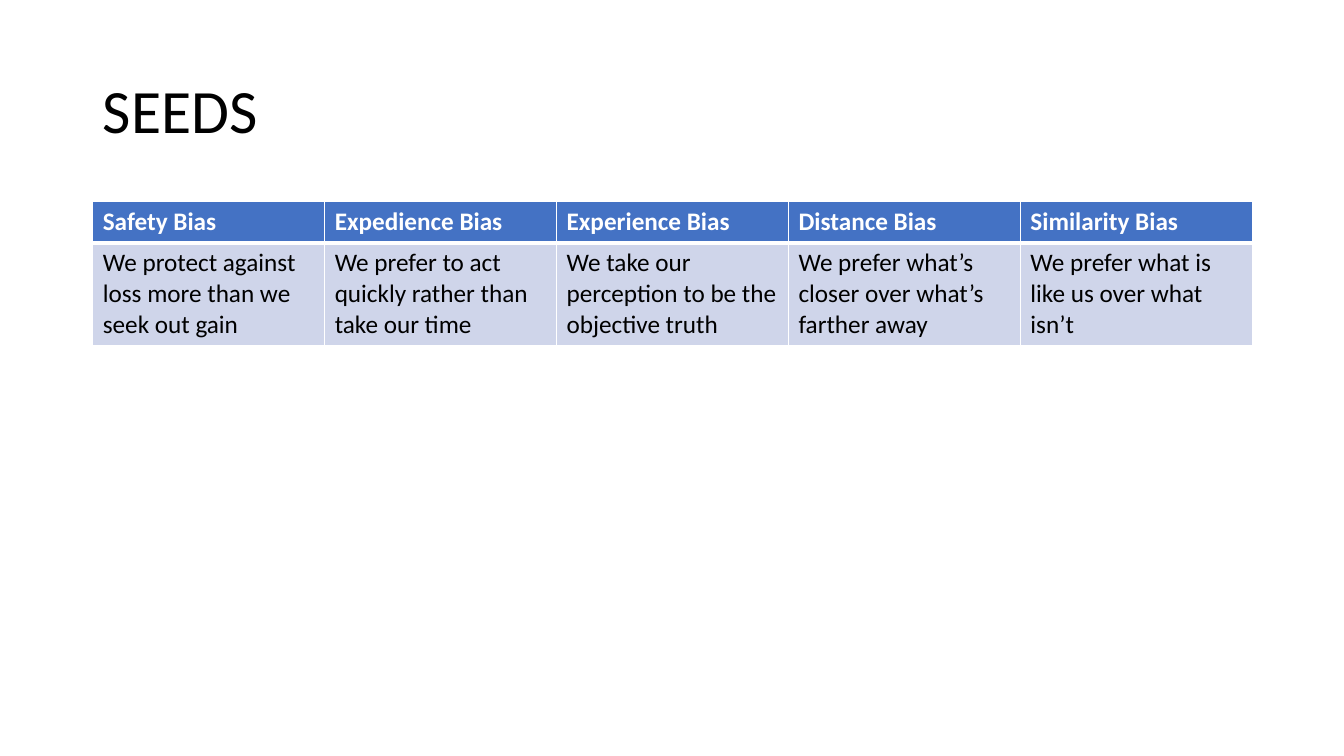
from lxml.etree import SubElement
from pptx import Presentation
from pptx.dml.color import RGBColor
from pptx.enum.text import MSO_ANCHOR, MSO_AUTO_SIZE, PP_ALIGN
from pptx.oxml.ns import qn
from pptx.util import Inches, Pt

FONT = "Calibri"
WHITE, BLACK = "FFFFFF", "000000"
BLUE, PALE = "4472C4", "CFD5EA"
LEFT, WIDTH = 0.92, 11.5

BIASES = [
    ("Safety Bias", "We protect against loss more than we seek out gain"),
    ("Expedience Bias", "We prefer to act quickly rather than take our time"),
    ("Experience Bias", "We take our perception to be the objective truth"),
    ("Distance Bias", "We prefer what’s closer over what’s farther away"),
    ("Similarity Bias", "We prefer what is like us over what isn’t"),
]


def paint(target, color):
    target.rgb = RGBColor.from_string(color)


def write(frame, text, size=18, color=BLACK, bold=False, space=1.0):
    para = frame.paragraphs[0]
    para.alignment = PP_ALIGN.LEFT
    para.line_spacing = space
    run = para.add_run()
    run.text = text
    run.font.name = FONT
    run.font.size = Pt(size)
    run.font.bold = bold
    paint(run.font.color, color)


def border(cell, **sides):
    props = cell._tc.get_or_add_tcPr()
    for side, width in sides.items():
        line = SubElement(props, qn(f"a:ln{side}"), w=str(Pt(width)))
        fill = SubElement(line, qn("a:solidFill"))
        SubElement(fill, qn("a:srgbClr"), val=WHITE)


def add_title(slide, text):
    title = slide.shapes.title
    title.left, title.top = Inches(LEFT), Inches(0.4)
    title.width, title.height = Inches(WIDTH), Inches(1.45)
    frame = title.text_frame
    frame.word_wrap = True
    frame.auto_size = MSO_AUTO_SIZE.NONE
    frame.vertical_anchor = MSO_ANCHOR.MIDDLE
    write(frame, text, size=44, space=0.9)


def add_grid(slide, items):
    heights = (0.41, 1.0)
    grid = slide.shapes.add_table(
        len(heights), len(items), Inches(LEFT), Inches(2),
        Inches(WIDTH), Inches(sum(heights))).table
    for row, height in zip(grid.rows, heights):
        row.height = Inches(height)
    for col, pair in enumerate(items):
        grid.columns[col].width = Inches(WIDTH / len(items))
        for row, text in enumerate(pair):
            head = row == 0
            cell = grid.cell(row, col)
            # A thick rule parts the header from the body
            border(cell, L=1, R=1, T=1 if head else 3, B=3 if head else 1)
            cell.fill.solid()
            paint(cell.fill.fore_color, BLUE if head else PALE)
            write(cell.text_frame, text, bold=head,
                  color=WHITE if head else BLACK)


def main():
    deck = Presentation()
    deck.slide_width, deck.slide_height = Inches(13.33), Inches(7.5)
    # Title Only layout
    slide = deck.slides.add_slide(deck.slide_layouts[5])
    add_title(slide, "SEEDS")
    add_grid(slide, BIASES)
    deck.save("out.pptx")


if __name__ == "__main__":
    main()
